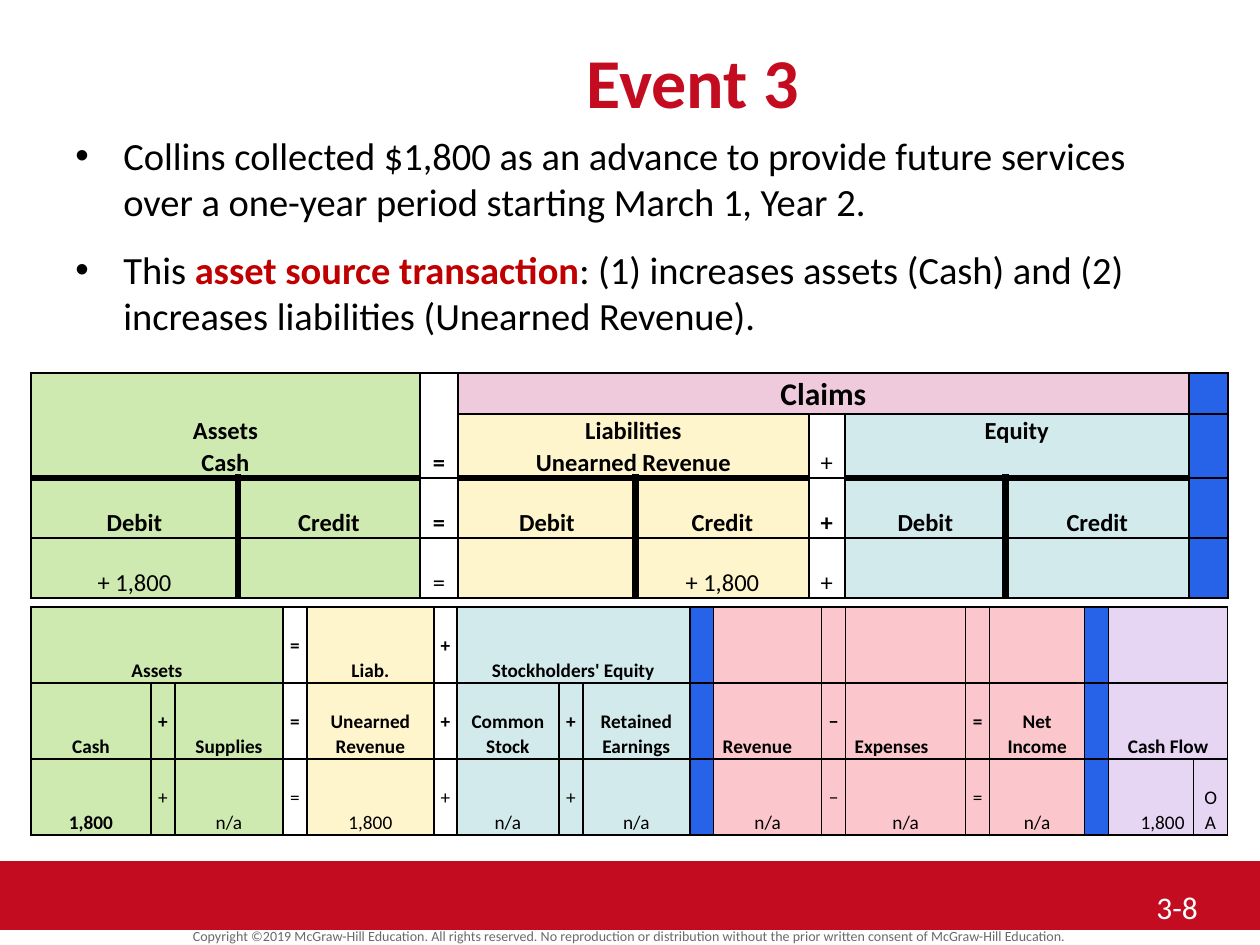
"""Build the Event 3 slide: transaction summary, T-accounts and statement effects."""
from lxml.etree import SubElement
from pptx import Presentation
from pptx.dml.color import RGBColor
from pptx.enum.shapes import MSO_SHAPE
from pptx.enum.text import MSO_ANCHOR, PP_ALIGN
from pptx.oxml import parse_xml
from pptx.oxml.ns import nsdecls, qn
from pptx.util import Pt

PX = 914400 / 126
FONT = "Calibri"
BLACK = RGBColor(0x00, 0x00, 0x00)
WHITE = RGBColor(0xFF, 0xFF, 0xFF)
GRAY = RGBColor(0x6A, 0x6A, 0x6A)
RED = RGBColor(0xC3, 0x0C, 0x20)
DARK_RED = RGBColor(0xC0, 0x00, 0x00)
GREEN = RGBColor(0xCE, 0xEA, 0xB0)
YELLOW = RGBColor(0xFF, 0xF5, 0xCC)
TEAL = RGBColor(0xD3, 0xEA, 0xED)
BLUE = RGBColor(0x27, 0x63, 0xE9)
ROSE = RGBColor(0xFB, 0xC6, 0xCC)
PINK = RGBColor(0xEF, 0xCA, 0xDD)
LILAC = RGBColor(0xE6, 0xD5, 0xF3)

BULLETS = [
    [("Collins collected $1,800 as an advance to provide future services "
      "over a one-year period starting March 1, Year 2.", BLACK, False)],
    [("This ", BLACK, False),
     ("asset source transaction", DARK_RED, True),
     (": (1) increases assets (Cash) and (2) increases liabilities "
      "(Unearned Revenue).", BLACK, False)],
]
LABELS = [
    ("Event 3", (126, 32, 1134, 84), 40, RED, True, PP_ALIGN.CENTER, 1),
    ("3-8", (1144, 882, 116, 53), 18, WHITE, False, PP_ALIGN.LEFT, 1),
    ("Copyright ©2019 McGraw-Hill Education. All rights reserved. No reproduction or "
     "distribution without the prior written consent of McGraw-Hill Education.",
     (0, 925, 1260, 24), 8, GRAY, False, PP_ALIGN.CENTER, 0.8),
]
OPERATORS = ("+", "=", "−")

STATEMENTS = {
    "position": (31, 607),
    "columns": [120, 24, 108, 24, 127, 23, 102, 24, 107, 24, 108, 24, 120, 24, 95, 24, 85, 34],
    "rows": [76, 76, 76],
    "cells": [
        ["Assets", "", "", "=", "Liab.", "+", "Stockholders' Equity"] + [""] * 11,
        ["Cash", "+", "Supplies", "=", "Unearned Revenue", "+", "Common Stock", "+",
         "Retained Earnings", "", "Revenue", "−", "Expenses", "=", "Net Income", "",
         "Cash Flow", ""],
        ["1,800", "+", "n/a", "=", "1,800", "+", "n/a", "+", "n/a", "", "n/a", "−",
         "n/a", "=", "n/a", "", "1,800", "OA"],
    ],
    "fills": [GREEN] * 3 + [None, YELLOW, None] + [TEAL] * 3 + [BLUE] + [ROSE] * 5
             + [BLUE] + [LILAC] * 2,
    "fill_changes": {},
    "merges": [(0, 0, 0, 2), (0, 6, 0, 8), (0, 16, 0, 17), (1, 16, 1, 17)],
    "plain": {(2, column) for column in range(1, 18)},
    "alignments": {(1, 10): PP_ALIGN.LEFT, (1, 12): PP_ALIGN.LEFT, (2, 16): PP_ALIGN.RIGHT},
    "size": 11,
    "operator_margins": {"margin_left": 0, "margin_right": 0, "margin_bottom": 25},
    "accounts": [],
}
T_ACCOUNTS = {
    "position": (31, 373),
    "columns": [207, 182, 38, 178, 173, 36, 161, 183, 39],
    "rows": [41, 64, 60, 60],
    "cells": [
        ["Assets\nCash", "", "=", "Claims", "", "", "", "", ""],
        ["", "", "", "Liabilities\nUnearned Revenue", "", "+", "Equity", "", ""],
        ["Debit", "Credit", "=", "Debit", "Credit", "+", "Debit", "Credit", ""],
        ["+ 1,800", "", "=", "", "+ 1,800", "+", "", "", ""],
    ],
    "fills": [GREEN] * 2 + [None] + [YELLOW] * 2 + [None] + [TEAL] * 2 + [BLUE],
    "fill_changes": {(0, column): PINK for column in range(3, 8)},
    "merges": [(0, 0, 1, 1), (0, 2, 1, 2), (0, 3, 0, 7), (1, 3, 1, 4), (1, 6, 1, 7)],
    "plain": {(1, 5)} | {(3, column) for column in range(9)},
    "alignments": {},
    "size": 14,
    "operator_margins": {},
    "accounts": [0, 3, 6],
}


def px(*lengths):
    return [round(length * PX) for length in lengths]


def apply(target, values):
    for name, value in values.items():
        setattr(target, name, value)


def style_run(run, size, color, bold):
    apply(run.font, {"name": FONT, "size": Pt(size), "bold": bold})
    run.font.color.rgb = color


def add_box(slide, place):
    box = slide.shapes.add_textbox(*px(*place))
    box.text_frame.word_wrap = True
    return box.text_frame


def add_label(slide, text, place, size, color, bold, alignment, spacing):
    paragraph = add_box(slide, place).paragraphs[0]
    apply(paragraph, {"alignment": alignment, "line_spacing": spacing})
    run = paragraph.add_run()
    run.text = text
    style_run(run, size, color, bold)


def add_bullets(slide):
    frame = add_box(slide, (63, 126, 1134, 693))
    for index, pieces in enumerate(BULLETS):
        paragraph = frame.add_paragraph() if index else frame.paragraphs[0]
        apply(paragraph, {"space_before": Pt(4.4 if index else 0), "space_after": Pt(8)})
        properties = paragraph._p.get_or_add_pPr()
        indent = px(48)[0]
        properties.set("marL", str(indent))
        properties.set("indent", str(-indent))
        SubElement(properties, qn("a:buFont")).set("typeface", "Arial")
        SubElement(properties, qn("a:buChar")).set("char", "•")
        for text, color, bold in pieces:
            run = paragraph.add_run()
            run.text = text
            style_run(run, 22, color, bold)


def heavy_sides(row, column, accounts):
    sides = set()
    for left in accounts:
        if column in (left, left + 1):
            if row < 2 and (row == 1 or left == 0):
                sides.add("B")
            if row == 2:
                sides.add("T")
            if row >= 2:
                sides.add("R" if column == left else "L")
    return sides


def add_borders(cell, heavy):
    properties = cell._tc.get_or_add_tcPr()
    for index, side in enumerate("LRTB"):
        width = Pt(4.5 if side in heavy else 1)
        properties.insert(index, parse_xml(
            f'<a:ln{side} {nsdecls("a")} w="{width}"><a:solidFill>'
            f'<a:srgbClr val="{BLACK}"/></a:solidFill></a:ln{side}>'))


def fill_cell(cell, text, row, column, data):
    margins = {"margin_left": 9, "margin_right": 9, "margin_top": 0, "margin_bottom": 0}
    if text in OPERATORS:
        margins.update(data["operator_margins"])
    apply(cell, {name: px(value)[0] for name, value in margins.items()})
    cell.vertical_anchor = MSO_ANCHOR.TOP if text == "Equity" else MSO_ANCHOR.BOTTOM
    color = data["fill_changes"].get((row, column), data["fills"][column])
    if color is None:
        cell.fill.background()
    else:
        cell.fill.solid()
        cell.fill.fore_color.rgb = color
    add_borders(cell, heavy_sides(row, column, data["accounts"]))
    if not text:
        return
    cell.text_frame.text = text
    alignment = data["alignments"].get((row, column), PP_ALIGN.CENTER)
    size = 18 if text == "Claims" else data["size"]
    for paragraph in cell.text_frame.paragraphs:
        apply(paragraph, {"alignment": alignment, "line_spacing": 1.07})
        for run in paragraph.runs:
            style_run(run, size, BLACK, (row, column) not in data["plain"])


def add_grid(slide, data):
    columns, rows = data["columns"], data["rows"]
    place = px(*data["position"], sum(columns), sum(rows))
    table = slide.shapes.add_table(len(rows), len(columns), *place).table
    apply(table, {"first_row": False, "horz_banding": False})
    for column, width in zip(table.columns, px(*columns)):
        column.width = width
    for row, height in zip(table.rows, px(*rows)):
        row.height = height
    for top, left, bottom, right in data["merges"]:
        table.cell(top, left).merge(table.cell(bottom, right))
    for row, texts in enumerate(data["cells"]):
        for column, text in enumerate(texts):
            fill_cell(table.cell(row, column), text, row, column, data)


def main():
    presentation = Presentation()
    width, height = px(1260, 945)
    apply(presentation, {"slide_width": width, "slide_height": height})
    slide = presentation.slides.add_slide(presentation.slide_layouts[6])
    band = slide.shapes.add_shape(MSO_SHAPE.RECTANGLE, *px(0, 861, 1260, 69))
    band.shadow.inherit = False
    band.fill.solid()
    band.fill.fore_color.rgb = RED
    band.line.fill.background()
    for label in LABELS:
        add_label(slide, *label)
    add_bullets(slide)
    for data in (STATEMENTS, T_ACCOUNTS):
        add_grid(slide, data)
    presentation.save("out.pptx")


if __name__ == "__main__":
    main()
